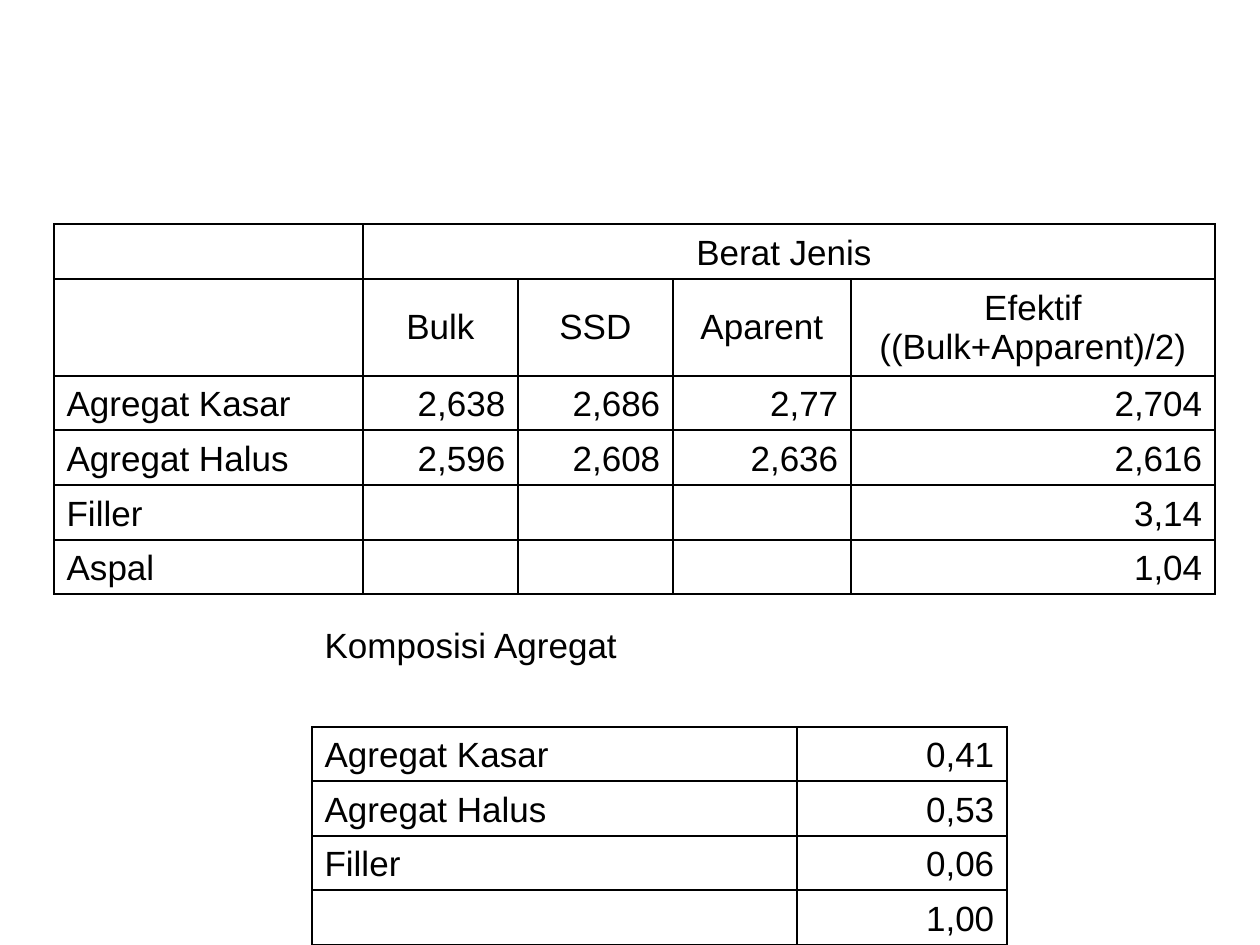
from lxml.etree import SubElement as Sub
from pptx import Presentation
from pptx.dml.color import RGBColor
from pptx.enum.text import MSO_ANCHOR as Anchor, PP_ALIGN as Align
from pptx.oxml.ns import qn
from pptx.util import Pt

PX = 914400 // 126
SIDES = "LRTB"


def color(code):
    return RGBColor.from_string(code)


def write(frame, text, size=20, font="Arial", ink="000000", align=Align.LEFT):
    para = frame.paragraphs[0]
    para.alignment = align
    run = para.add_run()
    run.text = text
    run.font.size = Pt(size)
    run.font.name = font
    run.font.bold = False
    run.font.color.rgb = color(ink)


class Deck:
    """Holds the table style and the current slide."""

    ink = "000000"
    line = Pt(1)

    def __init__(self, wide, high):
        self.show = Presentation()
        self.show.slide_width = wide * PX
        self.show.slide_height = high * PX
        self.slide = self.show.slides.add_slide(self.show.slide_layouts[6])

    def table(self, left, top, cols, rows):
        shape = self.slide.shapes.add_table(
            len(rows), len(cols), left * PX, top * PX, sum(cols) * PX, sum(rows) * PX)
        grid = shape.table
        grid.first_row = grid.horz_banding = False
        for col, size in zip(grid.columns, cols):
            col.width = size * PX
        for row, size in zip(grid.rows, rows):
            row.height = size * PX
        return grid

    def border(self, cell, sides):
        props = cell._tc.get_or_add_tcPr()
        for side in SIDES:
            edge = Sub(props, qn(f"a:ln{side}"), w=str(self.line))
            if side in sides:
                fill = Sub(edge, qn("a:solidFill"))
                Sub(fill, qn("a:srgbClr"), val=self.ink)
            else:
                Sub(edge, qn("a:noFill"))

    def cell(self, cell, text="", sides=SIDES, align=Align.LEFT, anchor=Anchor.BOTTOM):
        self.border(cell, sides)
        cell.fill.background()
        cell.vertical_anchor = anchor
        if text:
            write(cell.text_frame, text, ink=self.ink, align=align)

    def body(self, grid, start, data):
        for r, row in enumerate(data, start):
            for c, text in enumerate(row):
                self.cell(grid.cell(r, c), text, align=Align.RIGHT if c else Align.LEFT)


def density(deck):
    grid = deck.table(54, 224, [309, 155, 155, 178, 364], [55, 97, 54, 55, 55, 54])
    grid.cell(0, 1).merge(grid.cell(0, 4))
    for c, text in enumerate(["", "Berat Jenis ", "", "", ""]):
        deck.cell(grid.cell(0, c), text, align=Align.CENTER)
    heads = ["", "Bulk", "SSD", "Aparent", "Efektif ((Bulk+Apparent)/2)"]
    for c, text in enumerate(heads):
        deck.cell(grid.cell(1, c), text, align=Align.CENTER, anchor=Anchor.MIDDLE)
    deck.body(grid, 2, [
        ["Agregat Kasar", "2,638", "2,686", "2,77", "2,704"],
        ["Agregat Halus", "2,596", "2,608", "2,636", "2,616"],
        ["Filler", "", "", "", "3,14"],
        ["Aspal", "", "", "", "1,04"],
    ])


def mix(deck):
    grid = deck.table(312, 617, [485, 210], [55, 55, 54, 55, 54, 55])
    grid.cell(0, 0).merge(grid.cell(0, 1))
    for c, text in enumerate(["Komposisi Agregat", ""]):
        deck.cell(grid.cell(0, c), text, sides="")
        deck.cell(grid.cell(1, c), sides="B")
    deck.body(grid, 2, [
        ["Agregat Kasar", "0,41"],
        ["Agregat Halus", "0,53"],
        ["Filler", "0,06"],
        ["", "1,00"],
    ])


def main():
    deck = Deck(1260, 945)
    density(deck)
    mix(deck)
    deck.show.save("out.pptx")


if __name__ == "__main__":
    main()
